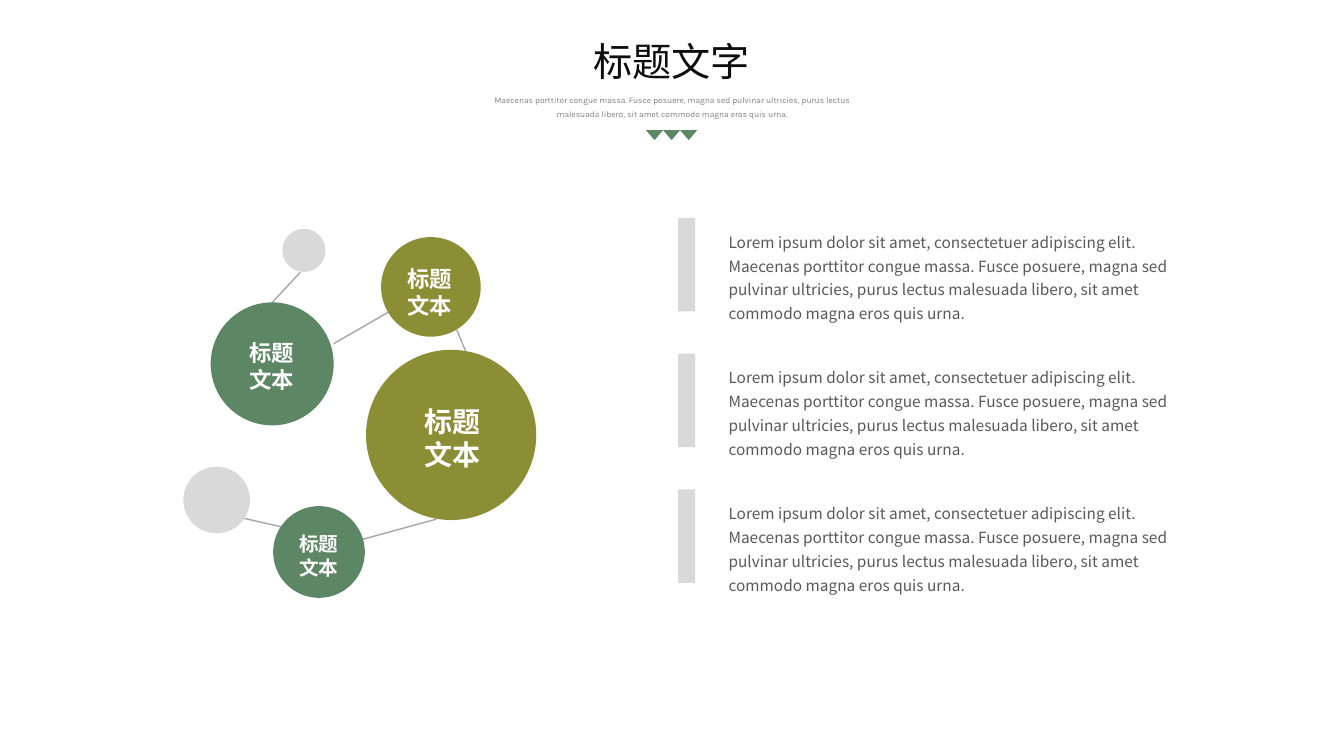
from lxml import etree
from pptx import Presentation
from pptx.dml.color import RGBColor
from pptx.enum import shapes, text
from pptx.oxml import ns
from pptx.util import Cm, Pt

GREEN, OLIVE, GRAY = "5D8665", "8C8E35", "D9D9D9"
LABEL = "标题\n文本"
SUBTITLE = (
    "Maecenas porttitor congue massa. Fusce posuere, magna sed pulvinar ultricies, "
    "purus lectus malesuada libero, sit amet commodo magna eros quis urna."
)
BODY = "Lorem ipsum dolor sit amet, consectetuer adipiscing elit. " + SUBTITLE

LINKS = [
    (7.57, 6.86, 6.86, 7.62),
    (7.37, 13.34, 5.66, 12.95),
    (11, 13.08, 9.14, 13.59),
    (11.73, 8.84, 11.51, 8.31),
    (9.78, 7.87, 8.41, 8.66),
]
CIRCLES = [
    (10.86, 7.23, 2.51, OLIVE),
    (6.86, 9.17, 3.1, GREEN),
    (7.66, 6.31, 1.09, GRAY),
    (8.04, 13.91, 2.31, GREEN),
    (5.46, 12.6, 1.68, GRAY),
    (11.37, 10.96, 4.29, OLIVE),
]
LABELS = [
    (6.85, 9.22, 16),
    (11.4, 11.04, 20),
    (10.83, 7.37, 16),
    (8.04, 14.01, 14),
]


def color(value):
    return RGBColor.from_string(value)


def write(frame, content, size=11, font="Noto Sans CJK SC", fill="595959",
          bold=False, align=text.PP_ALIGN.CENTER, spacing=None):
    for index, line in enumerate(content.split("\n")):
        paragraph = frame.paragraphs[0] if index == 0 else frame.add_paragraph()
        paragraph.alignment = align
        paragraph.line_spacing = Pt(spacing or size * 1.2)
        run = paragraph.add_run()
        run.text = line
        run.font.size = Pt(size)
        run.font.bold = bold
        run.font.color.rgb = color(fill)
        run.font.name = font
        east_asian = etree.SubElement(run.font._element, ns.qn("a:ea"))
        east_asian.set("typeface", font)


class Canvas:
    def __init__(self, slide, link_color="A6A6A6", link_width=1):
        self.slide = slide
        self.link_color = link_color
        self.link_width = link_width

    def shape(self, kind, left, top, width, height, fill, parent=None):
        target = (parent or self.slide).shapes
        shape = target.add_shape(kind, Cm(left), Cm(top), Cm(width), Cm(height))
        shape.shadow.inherit = False
        shape.fill.solid()
        shape.fill.fore_color.rgb = color(fill)
        shape.line.fill.background()
        return shape

    def circle(self, x, y, diameter, fill):
        return self.shape(shapes.MSO_SHAPE.OVAL, x - diameter / 2,
                          y - diameter / 2, diameter, diameter, fill)

    def link(self, *ends):
        connector = self.slide.shapes.add_connector(
            shapes.MSO_CONNECTOR.STRAIGHT, *map(Cm, ends))
        connector.line.color.rgb = color(self.link_color)
        connector.line.width = Pt(self.link_width)
        etree.SubElement(connector._element.spPr, ns.qn("a:effectLst"))

    def text(self, content, left, top, width, height, wrap=True, **style):
        box = self.slide.shapes.add_textbox(Cm(left), Cm(top), Cm(width), Cm(height))
        box.text_frame.word_wrap = wrap
        box.text_frame.auto_size = text.MSO_AUTO_SIZE.SHAPE_TO_FIT_TEXT
        write(box.text_frame, content, **style)

    def label(self, x, y, size):
        width, height = 0.25 + size * 0.09, 0.25 + size * 0.085
        self.text(LABEL, x - width / 2, y - height / 2, width, height,
                  wrap=False, size=size, fill="FFFFFF", bold=True)


def main():
    presentation = Presentation()
    presentation.slide_width, presentation.slide_height = Cm(33.87), Cm(19.05)
    slide = presentation.slides.add_slide(presentation.slide_layouts[6])
    canvas = Canvas(slide)

    marks = slide.shapes.add_group_shape()
    for column in range(3):
        triangle = canvas.shape(shapes.MSO_SHAPE.ISOSCELES_TRIANGLE,
                                16.28 + column * 0.43, 3.28, 0.43, 0.25, GREEN, marks)
        triangle.rotation = 180

    canvas.text("标题文字", 14.68, 0.82, 4.5, 1.45, wrap=False, size=28, fill="0D0D0D")
    canvas.text(SUBTITLE, 12.17, 2.18, 9.53, 0.94, size=6, font="Karla",
                fill="808080", spacing=10)

    for link in LINKS:
        canvas.link(*link)
    for circle in CIRCLES:
        canvas.circle(*circle)
    for label in LABELS:
        canvas.label(*label)

    for row in range(3):
        top = 5.49 + row * 3.42
        canvas.shape(shapes.MSO_SHAPE.RECTANGLE, 17.09, top, 0.43, 2.36, GRAY)
        canvas.text(BODY, 18.11, top + 0.12, 12.09, 2.03,
                    align=text.PP_ALIGN.LEFT, spacing=17)

    presentation.save("out.pptx")


if __name__ == "__main__":
    main()
